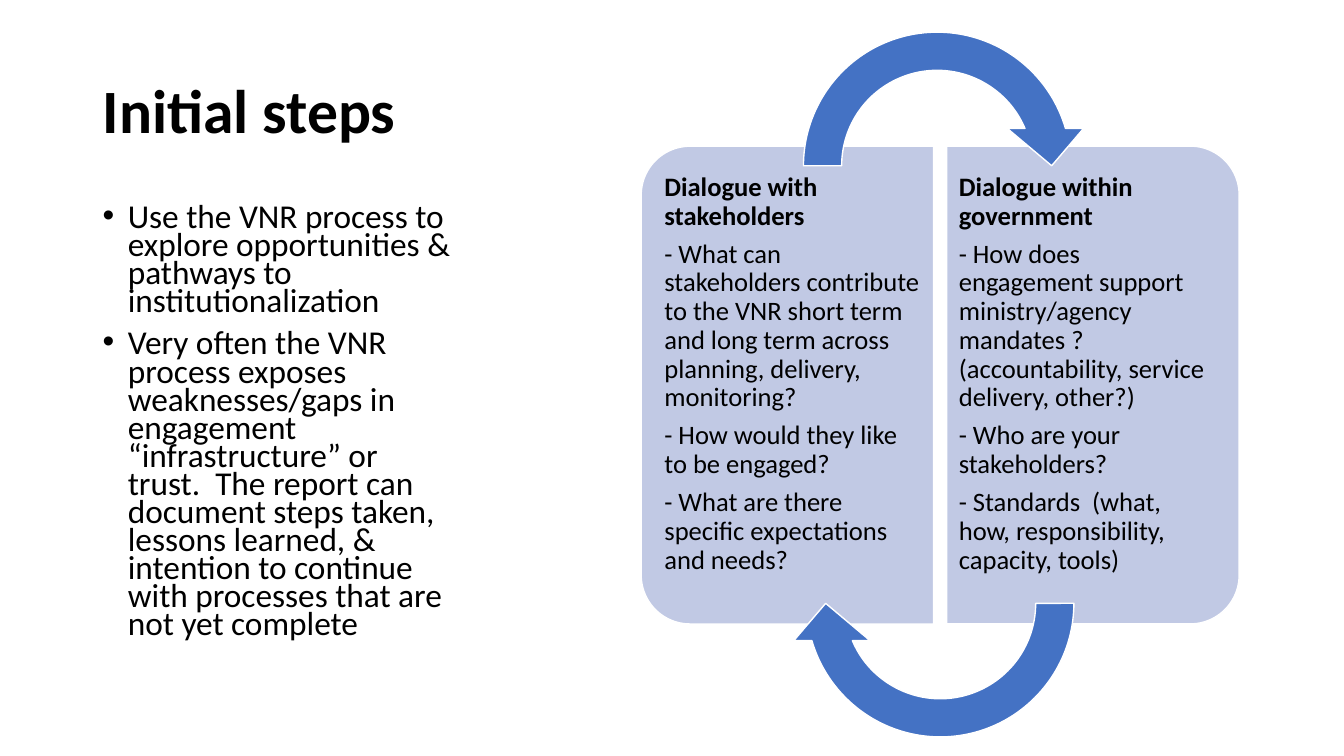
from dataclasses import dataclass

from lxml.etree import SubElement
from pptx import Presentation
from pptx.dml.color import RGBColor
from pptx.enum.shapes import MSO_SHAPE
from pptx.enum.text import MSO_ANCHOR
from pptx.oxml.ns import qn
from pptx.slide import Slide
from pptx.util import Inches, Pt

BLACK = RGBColor(0x00, 0x00, 0x00)
WHITE = RGBColor(0xFF, 0xFF, 0xFF)
BLUE = RGBColor(0x44, 0x72, 0xC4)
LAVENDER = RGBColor(0xC1, 0xC9, 0xE4)

Box = tuple[float, float, float, float]


@dataclass
class Outline:
    preset: MSO_SHAPE
    box: Box
    rotation: float
    adjustments: tuple[float, ...]
    color: RGBColor


@dataclass
class TextBlock:
    box: Box
    paragraphs: list[str]
    size: float
    line_spacing: float
    space_before: float = 0
    space_after: float = 0
    bold_first: bool = False
    bulleted: bool = False
    anchor: MSO_ANCHOR = MSO_ANCHOR.TOP
    insets: Box = (0.1, 0.05, 0.1, 0.05)


@dataclass
class Dialogue:
    panel_left: float
    rotation: float
    text_left: float
    insets: Box
    paragraphs: list[str]


def draw_outline(slide: Slide, outline: Outline) -> None:
    shape = slide.shapes.add_shape(outline.preset, *map(Inches, outline.box))
    shape.shadow.inherit = False
    shape.rotation = outline.rotation
    for index, value in enumerate(outline.adjustments):
        shape.adjustments[index] = value
    shape.fill.solid()
    shape.fill.fore_color.rgb = outline.color
    shape.line.color.rgb = WHITE
    shape.line.width = Pt(1)


def draw_text(slide: Slide, block: TextBlock) -> None:
    frame = slide.shapes.add_textbox(*map(Inches, block.box)).text_frame
    left, top, right, bottom = map(Inches, block.insets)
    frame_format = {
        "word_wrap": True,
        "vertical_anchor": block.anchor,
        "margin_left": left,
        "margin_top": top,
        "margin_right": right,
        "margin_bottom": bottom,
    }
    for name, value in frame_format.items():
        setattr(frame, name, value)

    paragraph_format = {
        "line_spacing": block.line_spacing,
        "space_before": Pt(block.space_before),
        "space_after": Pt(block.space_after),
    }
    for index, text in enumerate(block.paragraphs):
        paragraph = frame.add_paragraph() if index else frame.paragraphs[0]
        for name, value in paragraph_format.items():
            setattr(paragraph, name, value)
        run = paragraph.add_run()
        run.text = text
        font_format = {
            "name": "Calibri",
            "size": Pt(block.size),
            "bold": block.bold_first and index == 0,
        }
        for name, value in font_format.items():
            setattr(run.font, name, value)
        run.font.color.rgb = BLACK
        if block.bulleted:
            properties = paragraph._p.get_or_add_pPr()
            properties.set("marL", str(Inches(0.25)))
            properties.set("indent", str(-Inches(0.25)))
            SubElement(properties, qn("a:buFont"), typeface="Arial")
            SubElement(properties, qn("a:buChar"), char="•")


TITLE = TextBlock(
    (0.92, 0.4, 11.5, 1.45), ["Initial steps"], 44, 0.9,
    bold_first=True, anchor=MSO_ANCHOR.MIDDLE,
)
ADVICE = TextBlock(
    (0.92, 2, 3.66, 4.76),
    [
        "Use the VNR process to explore opportunities & pathways to institutionalization",
        "Very often the VNR process exposes weaknesses/gaps in engagement “infrastructure” "
        "or trust.  The report can document steps taken, lessons learned, & intention to "
        "continue with processes that are not yet complete",
    ],
    23.8, 0.7, space_before=10, bulleted=True,
)
DIALOGUES = [
    Dialogue(5.44, 270, 6.51, (0.08, 0.13, 0.12, 0.13), [
        "Dialogue with stakeholders",
        "- What can stakeholders contribute to the VNR short term and long term across "
        "planning, delivery, monitoring?",
        "- How would they like to be engaged?",
        "- What are there specific expectations and needs?",
    ]),
    Dialogue(8.47, 90, 9.39, (0.12, 0.13, 0.08, 0.13), [
        "Dialogue within government",
        "- How does engagement support ministry/agency mandates ? (accountability, "
        "service delivery, other?)",
        "- Who are your stakeholders?",
        "- Standards  (what, how, responsibility, capacity, tools)",
    ]),
]
# Left, top and rotation of the arrows over and under the panels
CYCLE_ARROWS = [(7.78, 0.13, 0), (7.81, 4.47, 180)]
ARROW_SIZE = 3.03
# Band width, head angle, end angle, start angle, head width
ARROW_ADJUSTMENTS = (0.125, 11.42319, 204.57681, 108, 0.125)


def main() -> None:
    presentation = Presentation()
    presentation.slide_width = Inches(13.33)
    presentation.slide_height = Inches(7.5)
    slide = presentation.slides.add_slide(presentation.slide_layouts[6])

    # Title and advice on the left
    draw_text(slide, TITLE)
    draw_text(slide, ADVICE)

    # Two facing dialogue panels
    for dialogue in DIALOGUES:
        draw_outline(slide, Outline(
            MSO_SHAPE.ROUND_2_SAME_RECTANGLE, (dialogue.panel_left, 2.37, 4.74, 2.9),
            dialogue.rotation, (0.167, 0), LAVENDER,
        ))
        draw_text(slide, TextBlock(
            (dialogue.text_left, 1.59, 2.75, 4.46), dialogue.paragraphs, 19, 0.9,
            space_after=6.65, bold_first=True, insets=dialogue.insets,
        ))

    # Arrows that close the cycle
    for left, top, rotation in CYCLE_ARROWS:
        draw_outline(slide, Outline(
            MSO_SHAPE.CIRCULAR_ARROW, (left, top, ARROW_SIZE, ARROW_SIZE),
            rotation, ARROW_ADJUSTMENTS, BLUE,
        ))

    presentation.save("out.pptx")


if __name__ == "__main__":
    main()
